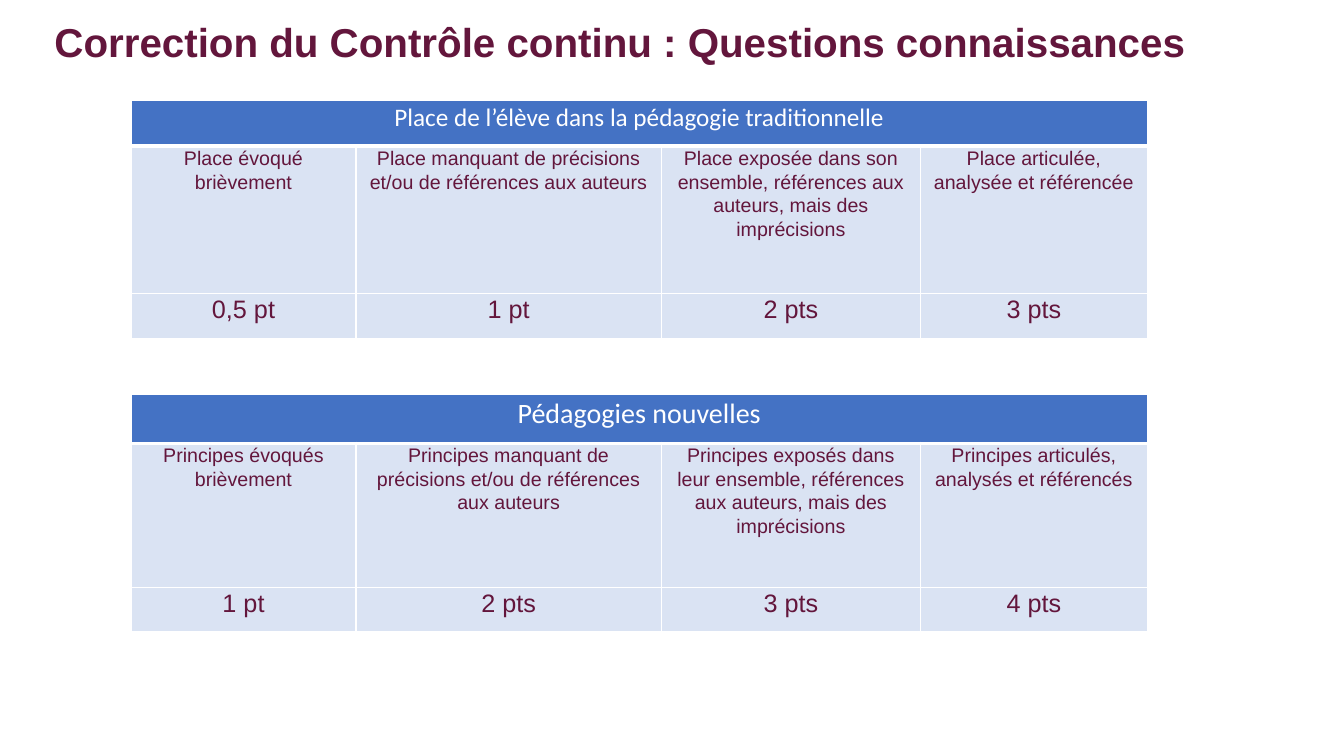
from pptx import Presentation
from pptx.dml.color import RGBColor
from pptx.enum.text import MSO_ANCHOR, PP_ALIGN
from pptx.oxml import parse_xml
from pptx.oxml.ns import nsdecls
from pptx.util import Inches, Pt

PLUM, WHITE, BLUE, PALE = "63163C", "FFFFFF", "4472C4", "DAE3F3"
COLUMN_WIDTHS = (2.23, 3.03, 2.57, 2.25)
TABLE_LEFT = 1.3

TRADITIONAL = (
    ("Place de l’élève dans la pédagogie traditionnelle",),
    ("Place évoqué brièvement",
     "Place manquant de précisions et/ou de références aux auteurs",
     "Place exposée dans son ensemble, références aux auteurs, mais des imprécisions",
     "Place articulée, analysée et référencée"),
    ("0,5 pt", "1 pt", "2 pts", "3 pts"),
)
NEW_METHODS = (
    ("Pédagogies nouvelles",),
    ("Principes évoqués brièvement",
     "Principes manquant de précisions et/ou de références aux auteurs",
     "Principes exposés dans leur ensemble, références aux auteurs, mais des imprécisions",
     "Principes articulés, analysés et référencés"),
    ("1 pt", "2 pts", "3 pts", "4 pts"),
)


def color(value):
    """Turn a hex string into a colour."""
    return RGBColor.from_string(value)


def apply(target, formats):
    """Set each attribute named in formats on the target."""
    for name, value in formats.items():
        setattr(target, name, value)


def write(para, text, font, size, ink, bold=False):
    """Fill a paragraph with one formatted span."""
    span = para.add_run()
    span.text = text
    apply(span.font, {"name": font, "size": Pt(size), "bold": bold})
    span.font.color.rgb = color(ink)


def add_borders(cell, bottom):
    """Draw white borders round a cell, the bottom one at its own width."""
    properties = cell._tc.get_or_add_tcPr()
    for side, width in (("L", 1), ("R", 1), ("T", 1), ("B", bottom)):
        properties.append(parse_xml(
            f'<a:ln{side} {nsdecls("a")} w="{Pt(width)}"><a:solidFill>'
            f'<a:srgbClr val="{WHITE}"/></a:solidFill></a:ln{side}>'))


def style_cell(cell, fill, bottom):
    """Set the margins, borders and fill of a cell."""
    apply(cell, {"margin_left": Inches(0.07), "margin_right": Inches(0.07),
                 "margin_top": 0, "margin_bottom": 0})
    add_borders(cell, bottom)
    cell.fill.solid()
    cell.fill.fore_color.rgb = color(fill)


def add_title(page, text):
    """Place and fill the title placeholder."""
    title = page.shapes.title
    apply(title, {"left": Inches(0.44), "top": Inches(0.04),
                  "width": Inches(11.81), "height": Inches(0.8)})
    apply(title.text_frame, {"word_wrap": True, "vertical_anchor": MSO_ANCHOR.MIDDLE})
    para = title.text_frame.paragraphs[0]
    apply(para, {"alignment": PP_ALIGN.LEFT, "line_spacing": 0.9})
    write(para, text, "Arial", 28.8, PLUM, bold=True)


def add_grading_table(page, top, row_heights, heading_size, rows):
    """Add a grading scale: merged heading, criteria, then points."""
    table = page.shapes.add_table(
        len(rows), len(COLUMN_WIDTHS), Inches(TABLE_LEFT), Inches(top),
        Inches(sum(COLUMN_WIDTHS)), Inches(sum(row_heights))).table
    for column, width in zip(table.columns, COLUMN_WIDTHS):
        column.width = Inches(width)
    for row, height in zip(table.rows, row_heights):
        row.height = Inches(height)
    table.cell(0, 0).merge(table.cell(0, len(COLUMN_WIDTHS) - 1))
    styles = (
        (BLUE, 3, "Calibri", heading_size, WHITE),
        (PALE, 1, "Arial", 14, PLUM),
        (PALE, 1, "Arial", 18, PLUM),
    )
    for row, texts, (fill, bottom, font, size, ink) in zip(table.rows, rows, styles):
        for cell in row.cells:
            style_cell(cell, fill, bottom)
        for cell, text in zip(row.cells, texts):
            para = cell.text_frame.paragraphs[0]
            apply(para, {"alignment": PP_ALIGN.CENTER, "line_spacing": 1.07,
                         "space_after": Pt(8)})
            write(para, text, font, size, ink)


def main():
    """Build the slide and save it."""
    deck = Presentation()
    apply(deck, {"slide_width": Inches(13.33), "slide_height": Inches(7.5)})
    page = deck.slides.add_slide(deck.slide_layouts[5])
    add_title(page, "Correction du Contrôle continu : Questions connaissances")
    add_grading_table(page, 3.91, (0.49, 1.43, 0.44), 20, NEW_METHODS)
    add_grading_table(page, 1, (0.45, 1.46, 0.45), 18, TRADITIONAL)
    deck.save("out.pptx")


if __name__ == "__main__":
    main()
